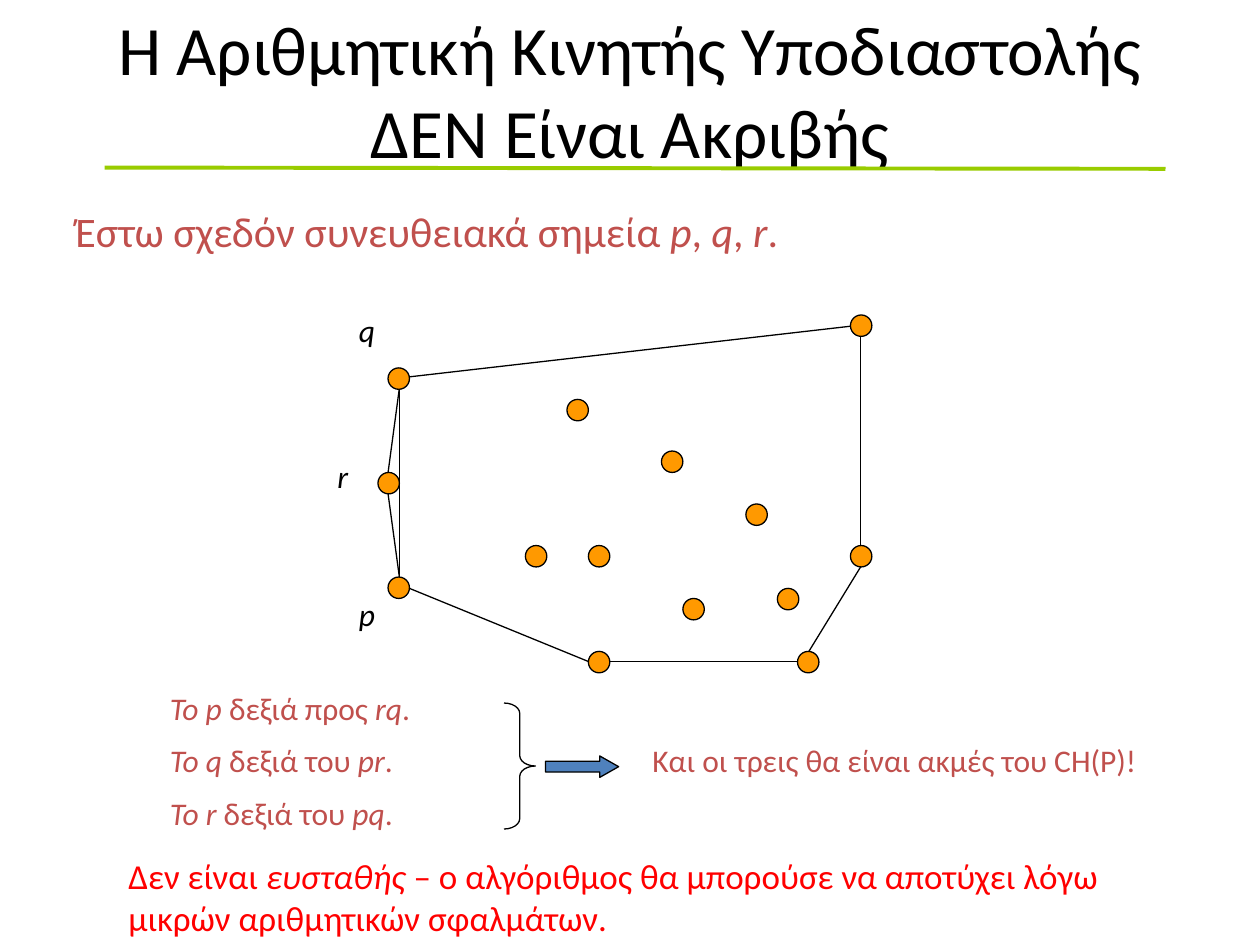
"""Build a slide on the inexactness of floating-point arithmetic for convex hulls."""
from lxml import etree
from pptx import Presentation
from pptx.dml.color import RGBColor
from pptx.enum.shapes import MSO_CONNECTOR, MSO_SHAPE
from pptx.enum.text import MSO_ANCHOR, MSO_AUTO_SIZE, PP_ALIGN
from pptx.oxml.ns import qn
from pptx.util import Inches, Pt

STRAIGHT = MSO_CONNECTOR.STRAIGHT
OVAL = MSO_SHAPE.OVAL
RIGHT_BRACE = MSO_SHAPE.RIGHT_BRACE
RIGHT_ARROW = MSO_SHAPE.RIGHT_ARROW
MIDDLE = MSO_ANCHOR.MIDDLE
CENTER = PP_ALIGN.CENTER
FIT_SHAPE = MSO_AUTO_SIZE.SHAPE_TO_FIT_TEXT

FONT = "Calibri"
BLACK, BRICK, RED = "000000", "C0504D", "FF0000"
ORANGE, GREEN, BLUE = "FF9900", "99CC00", "4F81BD"
DOT_SIZE = 0.17

INNER_POINTS = [(4.5, 3.17), (5.25, 3.58), (5.92, 4), (4.17, 4.33), (4.67, 4.33),
                (5.42, 4.75), (6.17, 4.67)]
HULL_POINTS = [(3.08, 2.92), (6.75, 2.5), (6.75, 4.33), (6.33, 5.17), (4.67, 5.17),
               (3.08, 4.58), (3, 3.75)]
EDGES = [((3.17, 3), (6.83, 2.58)), ((6.83, 2.67), (6.83, 4.33)),
         ((6.83, 4.5), (6.42, 5.17)), ((6.33, 5.25), (4.83, 5.25)),
         ((4.67, 5.25), (3.25, 4.67)), ((3.17, 3.08), (3.17, 4.58)),
         ((3.17, 3.08), (3.08, 3.75)), ((3.17, 4.58), (3.08, 3.92))]
POINT_LABELS = [("*p*", 2.75, 4.67), ("*r*", 2.58, 3.58), ("*q*", 2.75, 2.42)]
ORIENTATIONS = ["*Το p *δεξιά προς *rq*.", "*To q *δεξιά του *pr*.", "*To r *δεξιά του *pq*."]


def rgb(color):
    """Turn a hex string into a colour."""
    return RGBColor.from_string(color)


def format_run(run, size, color, italic=False):
    """Set the font of a run."""
    run.font.name = FONT
    run.font.size = Pt(size)
    run.font.italic = italic
    run.font.color.rgb = rgb(color)


def set_title(slide, text):
    """Place and format the title placeholder."""
    title = slide.shapes.title
    title.left, title.top = Inches(0.75), Inches(0)
    title.width, title.height = Inches(8.5), Inches(1.42)
    frame = title.text_frame
    frame.text = text
    frame.vertical_anchor = MIDDLE
    paragraph = frame.paragraphs[0]
    paragraph.alignment = CENTER
    format_run(paragraph.runs[0], 39.6, BLACK)


def add_text(slide, text, left, top, width, height, size=18, color=BRICK, wrap=False):
    """Add a text box in which asterisks enclose the italic parts."""
    box = slide.shapes.add_textbox(Inches(left), Inches(top), Inches(width), Inches(height))
    frame = box.text_frame
    frame.word_wrap = wrap
    frame.auto_size = FIT_SHAPE
    for index, part in enumerate(text.split("*")):
        if part:
            run = frame.paragraphs[0].add_run()
            run.text = part
            format_run(run, size, color, italic=index % 2 == 1)


def add_line(slide, start, end, color=BLACK, width=0.75):
    """Add a straight line without a shadow."""
    line = slide.shapes.add_connector(STRAIGHT, *map(Inches, start + end))
    line.line.color.rgb = rgb(color)
    line.line.width = Pt(width)
    etree.SubElement(line._element.spPr, qn("a:effectLst"))


def add_figure(slide, kind, left, top, width, height, fill=None, adjustments=()):
    """Add a preset shape with a thin black outline."""
    shape = slide.shapes.add_shape(kind, Inches(left), Inches(top), Inches(width), Inches(height))
    shape.shadow.inherit = False
    shape.line.color.rgb = rgb(BLACK)
    shape.line.width = Pt(0.75)
    if fill:
        shape.fill.solid()
        shape.fill.fore_color.rgb = rgb(fill)
    else:
        shape.fill.background()
    for index, value in enumerate(adjustments):
        shape.adjustments[index] = value


def add_hull(slide):
    """Draw the point set, its hull edges and the point names."""
    for start, end in EDGES:
        add_line(slide, start, end)
    for left, top in INNER_POINTS + HULL_POINTS:
        add_figure(slide, OVAL, left, top, DOT_SIZE, DOT_SIZE, ORANGE)
    for label, left, top in POINT_LABELS:
        add_text(slide, label, left, top, 0.37, 0.5, color=BLACK)


def add_conclusion(slide):
    """Add the three orientation results and what follows from them."""
    for index, text in enumerate(ORIENTATIONS):
        add_text(slide, text, 1.25, 5.42 + index * 0.415, 2.2, 0.4)
    add_figure(slide, RIGHT_BRACE, 4, 5.58, 0.25, 1, adjustments=(0.33, 0.5))
    add_figure(slide, RIGHT_ARROW, 4.33, 6, 0.58, 0.17, BLUE, (0.5, 0.88))
    add_text(slide, "Και οι τρεις θα είναι ακμές του CH(P)!", 5.08, 5.83, 4.1, 0.4)
    add_text(slide, "Δεν είναι *ευσταθής *– ο αλγόριθμος θα μπορούσε να αποτύχει λόγω "
             "μικρών αριθμητικών σφαλμάτων.", 0.92, 6.73, 8.02, 0.77, 20, RED, wrap=True)


def main():
    """Build and save the presentation."""
    presentation = Presentation()
    presentation.slide_width, presentation.slide_height = Inches(10), Inches(7.5)
    slide = presentation.slides.add_slide(presentation.slide_layouts[5])
    set_title(slide, "Η Αριθμητική Κινητής Υποδιαστολής ΔΕΝ Είναι Ακριβής")
    add_line(slide, (0.83, 1.33), (9.25, 1.34), GREEN, 2.25)
    add_text(slide, "Έστω σχεδόν συνευθειακά σημεία *p*, *q*,* r*.", 0.5, 1.58, 5.9, 0.5, 24)
    add_hull(slide)
    add_conclusion(slide)
    presentation.save("out.pptx")


if __name__ == "__main__":
    main()
